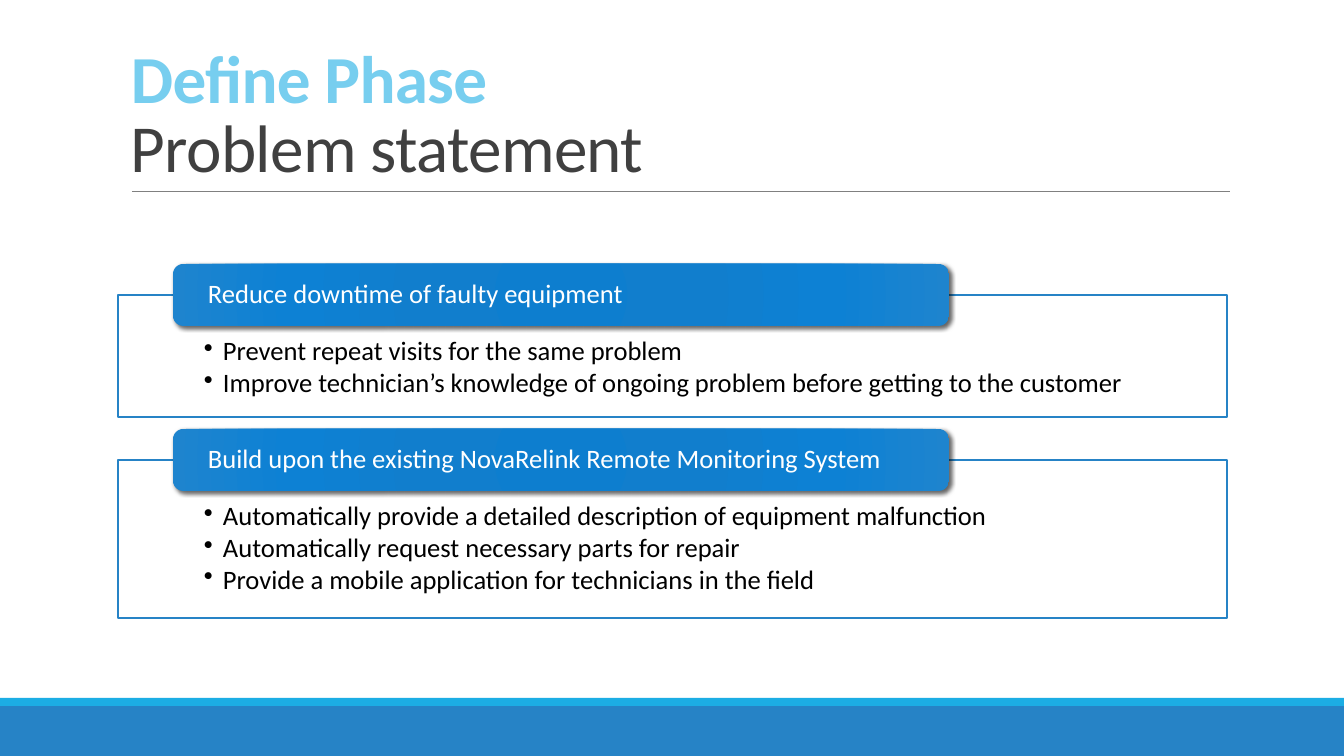
import pptx
import pptx.dml.color
import pptx.enum.shapes
import pptx.enum.text
import pptx.oxml
import pptx.oxml.ns
import pptx.util
from lxml import etree

# Content
TITLE = [("Define Phase", "77CEEF", True), ("Problem statement", "404040", False)]
SECTIONS = [
    ("Reduce downtime of faulty equipment", 122, [
        "Prevent repeat visits for the same problem",
        "Improve technician’s knowledge of ongoing problem before getting to the customer",
    ]),
    ("Build upon the existing NovaRelink Remote Monitoring System", 158, [
        "Automatically provide a detailed description of equipment malfunction",
        "Automatically request necessary parts for repair",
        "Provide a mobile application for technicians in the field",
    ]),
]
FOOTER_BARS = [(706, 50, "2683C6"), (698, 8, "1CADE4")]
GRADIENT = [(0, "0D7ECF"), (34, "117ECD"), (70, "0D81D4"), (100, "1E84CE")]

# Layout in px
SLIDE_WIDTH, SLIDE_HEIGHT = 1344, 756
PANEL_LEFT, PANEL_TOP, PANEL_WIDTH, PANEL_GAP = 118, 295, 1109, 43
LABEL_LEFT, LABEL_WIDTH, LABEL_HEIGHT, LABEL_RISE = 173, 776, 62, 31
BULLET_INDENT = 19
SHAPES = pptx.enum.shapes.MSO_SHAPE
ANCHORS = pptx.enum.text.MSO_ANCHOR
NAMESPACE = pptx.oxml.ns.nsdecls("a")


def px(value):
    return round(value * 914400 / 100.8)


def color(value):
    return pptx.dml.color.RGBColor.from_string(value)


def add_box(preset, left, top, width, height, fill=None, line=None):
    shape = slide.shapes.add_shape(preset, px(left), px(top), px(width), px(height))
    shape.shadow.inherit = False
    if fill:
        shape.fill.solid()
        shape.fill.fore_color.rgb = color(fill)
    else:
        shape.fill.background()
    if line:
        shape.line.color.rgb = color(line)
        shape.line.width = pptx.util.Pt(1)
    else:
        shape.line.fill.background()
    return shape


def add_text(shape, paragraphs, size=19, spacing=0.9, after=0, anchor=ANCHORS.TOP,
             insets=(10, 5, 10, 5), bullet=False, tracking=None):
    """Each paragraph is a list of (text, color, bold) lines."""
    frame = shape.text_frame
    frame.word_wrap = True
    frame.vertical_anchor = anchor
    (frame.margin_left, frame.margin_top,
     frame.margin_right, frame.margin_bottom) = map(px, insets)
    for index, lines in enumerate(paragraphs):
        paragraph = frame.add_paragraph() if index else frame.paragraphs[0]
        paragraph.alignment = pptx.enum.text.PP_ALIGN.LEFT
        paragraph.line_spacing = spacing
        paragraph.space_after = pptx.util.Pt(after)
        if bullet:
            properties = paragraph._p.get_or_add_pPr()
            properties.set("marL", str(px(BULLET_INDENT)))
            properties.set("indent", str(-px(BULLET_INDENT)))
            etree.SubElement(properties, pptx.oxml.ns.qn("a:buChar"), char="•")
        for number, (text, text_color, bold) in enumerate(lines):
            if number:
                paragraph.add_line_break()
            run = paragraph.add_run()
            run.text = text
            run.font.name = "Calibri"
            run.font.size = pptx.util.Pt(size)
            run.font.bold = bold
            run.font.color.rgb = color(text_color)
            if tracking:
                run._r.get_or_add_rPr().set("spc", str(tracking))


def style_label(shape):
    """Radial gradient and soft shadow."""
    stops = "".join(f'<a:gs pos="{position * 1000}"><a:srgbClr val="{value}"/></a:gs>'
                    for position, value in GRADIENT)
    gradient = pptx.oxml.parse_xml(
        f'<a:gradFill {NAMESPACE} rotWithShape="1"><a:gsLst>{stops}</a:gsLst>'
        '<a:path path="circle"><a:fillToRect l="100000" t="100000" r="100000" b="100000"/>'
        '</a:path></a:gradFill>')
    shadow = pptx.oxml.parse_xml(
        f'<a:outerShdw {NAMESPACE} blurRad="38100" dist="25400" dir="2700000" rotWithShape="0">'
        '<a:srgbClr val="000000"><a:alpha val="60000"/></a:srgbClr></a:outerShdw>')
    properties = shape._element.spPr
    properties.replace(properties.find(pptx.oxml.ns.qn("a:noFill")), gradient)
    properties.find(pptx.oxml.ns.qn("a:effectLst")).append(shadow)


presentation = pptx.Presentation()
presentation.slide_width = px(SLIDE_WIDTH)
presentation.slide_height = px(SLIDE_HEIGHT)
slide = presentation.slides.add_slide(presentation.slide_layouts[6])

# Footer bars
for top, height, fill in FOOTER_BARS:
    add_box(SHAPES.RECTANGLE, 0, top, SLIDE_WIDTH, height, fill)

# Title and rule
rule = slide.shapes.add_connector(
    pptx.enum.shapes.MSO_CONNECTOR.STRAIGHT, px(132), px(191), px(1230), px(191))
rule.line.color.rgb = color("808080")
rule.line.width = pptx.util.Pt(0.5)
etree.SubElement(rule._element.spPr, pptx.oxml.ns.qn("a:effectLst"))
title = slide.shapes.add_textbox(px(121), px(31), px(1109), px(160))
add_text(title, [TITLE], size=48, spacing=0.85, anchor=ANCHORS.BOTTOM, tracking=-50)

# Panels with overlapping labels
top = PANEL_TOP
for heading, height, bullets in SECTIONS:
    panel = add_box(SHAPES.RECTANGLE, PANEL_LEFT, top, PANEL_WIDTH, height, "FFFFFF", "2683C6")
    add_text(panel, [[(text, "000000", False)] for text in bullets],
             after=2.3, insets=(86, 43, 86, 15), bullet=True)
    label = add_box(SHAPES.ROUNDED_RECTANGLE, LABEL_LEFT, top - LABEL_RISE,
                    LABEL_WIDTH, LABEL_HEIGHT)
    style_label(label)
    add_text(label, [[(heading, "FFFFFF", False)]], anchor=ANCHORS.MIDDLE,
             insets=(32, 0, 32, 0))
    top += height + PANEL_GAP

presentation.save("out.pptx")
